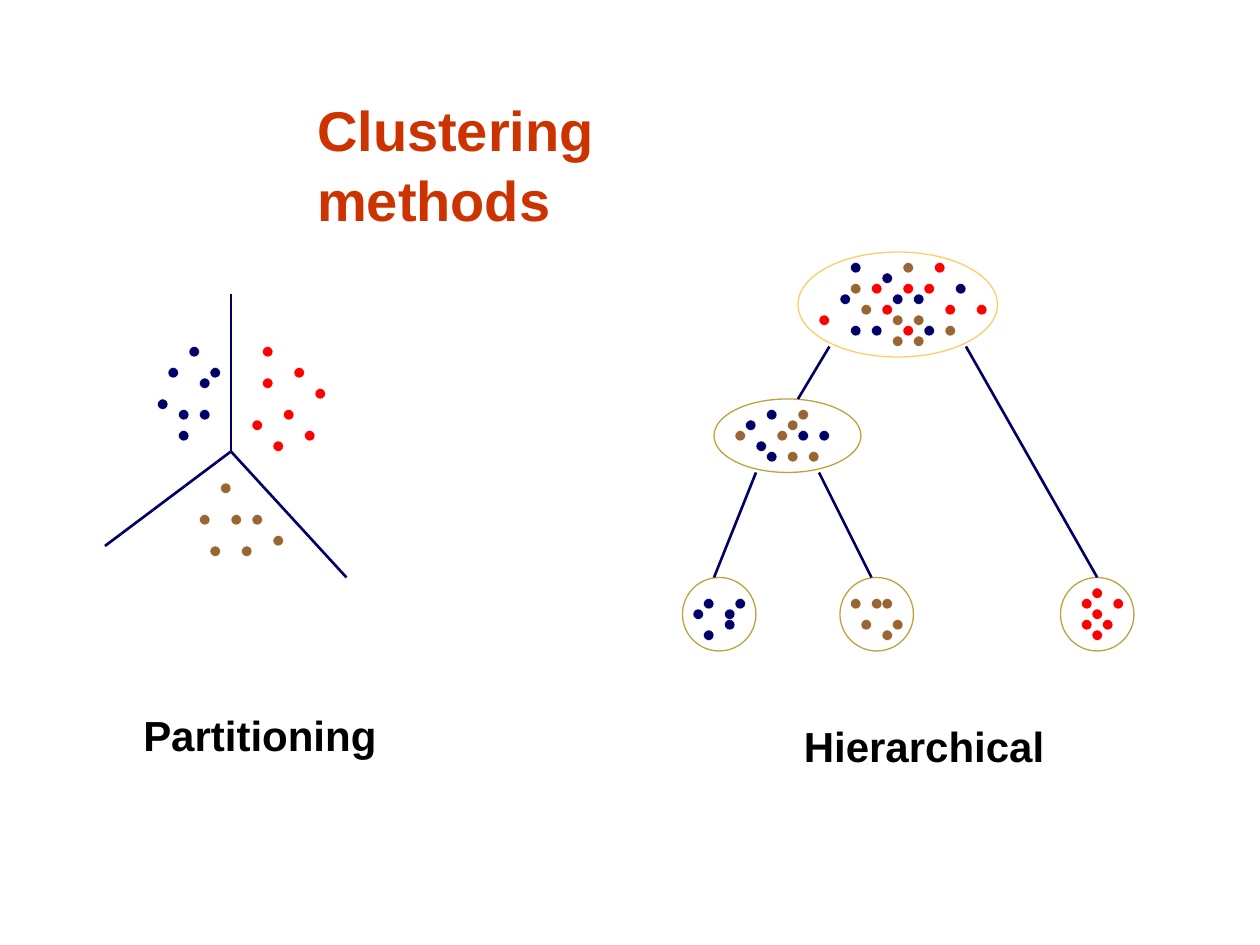
from typing import NamedTuple

from lxml.etree import SubElement
from pptx import Presentation
from pptx.dml.color import RGBColor
from pptx.enum.shapes import MSO_CONNECTOR as Connector, MSO_SHAPE as Preset
from pptx.enum.text import MSO_ANCHOR as Anchor, MSO_AUTO_SIZE as AutoSize, PP_ALIGN as Align
from pptx.oxml.ns import qn
from pptx.shapes.base import BaseShape
from pptx.slide import Slide
from pptx.text.text import _Paragraph as Paragraph
from pptx.util import Emu, Pt

EMU_PER_PX = 9525
CELL = 8
FONT = "Arial"
NAVY = RGBColor(0x00, 0x00, 0x66)
RED = RGBColor(0xFF, 0x00, 0x00)
BROWN = RGBColor(0x99, 0x66, 0x33)
ORANGE = RGBColor(0xFF, 0xCC, 0x66)
OLIVE = RGBColor(0xBA, 0xA5, 0x3D)
RUST = RGBColor(0xCC, 0x33, 0x00)
BLACK = RGBColor(0x00, 0x00, 0x00)
WHITE = RGBColor(0xFF, 0xFF, 0xFF)


class Box(NamedTuple):
    left: int
    top: int
    width: int
    height: int


class Outline(NamedTuple):
    box: Box
    color: RGBColor


class Segment(NamedTuple):
    x1: int
    y1: int
    x2: int
    y2: int


class Cluster(NamedTuple):
    color: RGBColor
    cells: list[tuple[int, int]]


class Label(NamedTuple):
    text: str
    box: Box


TITLE_BOX = Box(232, 64, 420, 60)

OUTLINES = [
    Outline(Box(608, 192, 152, 80), ORANGE),
    Outline(Box(544, 304, 112, 56), OLIVE),
    *[Outline(Box(left, 440, 56, 56), OLIVE) for left in (520, 640, 808)],
]

PARTITION_BORDERS = [
    Segment(176, 224, 176, 344),
    Segment(176, 344, 80, 416),
    Segment(176, 344, 264, 440),
]

TREE_BRANCHES = [
    Segment(736, 264, 836, 440),
    Segment(632, 264, 608, 304),
    Segment(624, 360, 664, 440),
    Segment(576, 360, 544, 440),
]

PARTITIONS = [
    Cluster(NAVY, [(18, 33), (17, 41), (16, 35), (19, 36), (15, 38), (17, 39), (20, 35), (19, 39)]),
    Cluster(RED, [(30, 37), (25, 33), (29, 41), (28, 35), (26, 42), (27, 39), (24, 40), (25, 36)]),
    Cluster(BROWN, [(19, 49), (24, 49), (20, 52), (21, 46), (23, 52), (26, 51), (22, 49)]),
]

TREE_ROOT = [
    Cluster(BROWN, [(81, 27), (90, 31), (82, 29), (85, 32), (86, 25), (85, 30), (87, 30), (87, 32)]),
    Cluster(RED, [(90, 29), (88, 27), (86, 27), (84, 29), (83, 27), (78, 30), (93, 29), (86, 31),
                  (89, 25)]),
    Cluster(NAVY, [(81, 31), (84, 26), (88, 31), (80, 28), (85, 28), (91, 27), (87, 28), (83, 31),
                   (81, 25)]),
]

TREE_MIDDLE = [
    Cluster(BROWN, [(75, 40), (74, 41), (75, 43), (76, 39), (77, 43), (70, 41)]),
    Cluster(NAVY, [(71, 40), (72, 42), (78, 41), (76, 41), (73, 43), (73, 39)]),
]

TREE_LEAVES = [
    Cluster(NAVY, [(67, 57), (70, 57), (66, 58), (67, 60), (69, 58), (69, 59)]),
    Cluster(BROWN, [(81, 57), (83, 57), (84, 57), (82, 59), (85, 59), (84, 60)]),
    Cluster(RED, [(104, 58), (104, 60), (104, 56), (105, 59), (103, 59), (106, 57), (103, 57)]),
]

LABELS = [
    Label("Hierarchical ", Box(602, 544, 213, 49)),
    Label("Partitioning ", Box(99, 536, 207, 49)),
]


def px(length: int) -> Emu:
    return Emu(length * EMU_PER_PX)


def place(shape: BaseShape, box: Box) -> None:
    shape.left, shape.top, shape.width, shape.height = map(px, box)


def format_text(para: Paragraph, size: int, color: RGBColor, align: Align) -> None:
    para.alignment = align
    for span in para.runs:
        span.font.name = FONT
        span.font.size = Pt(size)
        span.font.bold = True
        span.font.color.rgb = color


def draw_title(page: Slide, text: str) -> None:
    title = page.shapes.title
    place(title, TITLE_BOX)
    frame = title.text_frame
    frame.text = text
    frame.auto_size = AutoSize.NONE
    frame.vertical_anchor = Anchor.TOP
    frame.word_wrap = True
    frame.margin_top = px(7)
    frame.margin_right = px(96)
    para = frame.paragraphs[0]
    para.line_spacing = 1.04
    format_text(para, 32, RUST, Align.LEFT)


def draw_ellipse(page: Slide, box: Box, line: RGBColor, weight: float,
                 fill: RGBColor | None = None) -> None:
    ellipse = page.shapes.add_shape(Preset.OVAL, *map(px, box))
    ellipse.shadow.inherit = False
    ellipse.line.color.rgb = line
    ellipse.line.width = Pt(weight)
    if fill is None:
        ellipse.fill.background()
    else:
        ellipse.fill.solid()
        ellipse.fill.fore_color.rgb = fill


def draw_segment(page: Slide, segment: Segment) -> None:
    line = page.shapes.add_connector(Connector.STRAIGHT, *map(px, segment))
    line.line.color.rgb = NAVY
    line.line.width = Pt(1.5)
    SubElement(line._element.spPr, qn("a:effectLst"))


def draw_cluster(page: Slide, cluster: Cluster) -> None:
    for column, row in cluster.cells:
        dot = Box(column * CELL, row * CELL, CELL, CELL)
        draw_ellipse(page, dot, WHITE, 0.25, cluster.color)


def draw_label(page: Slide, label: Label) -> None:
    frame = page.shapes.add_textbox(*map(px, label.box)).text_frame
    frame.text = label.text
    frame.word_wrap = False
    frame.auto_size = AutoSize.SHAPE_TO_FIT_TEXT
    format_text(frame.paragraphs[0], 24, BLACK, Align.CENTER)


def main() -> None:
    deck = Presentation()
    deck.slide_width, deck.slide_height = px(960), px(720)
    page = deck.slides.add_slide(deck.slide_layouts.get_by_name("Title Only"))
    draw_title(page, "Clustering methods")
    for outline in OUTLINES:
        draw_ellipse(page, outline.box, outline.color, 0.75)
    for segment in PARTITION_BORDERS + TREE_BRANCHES:
        draw_segment(page, segment)
    for cluster in TREE_ROOT + TREE_MIDDLE + TREE_LEAVES + PARTITIONS:
        draw_cluster(page, cluster)
    for label in LABELS:
        draw_label(page, label)
    deck.save("out.pptx")


if __name__ == "__main__":
    main()
